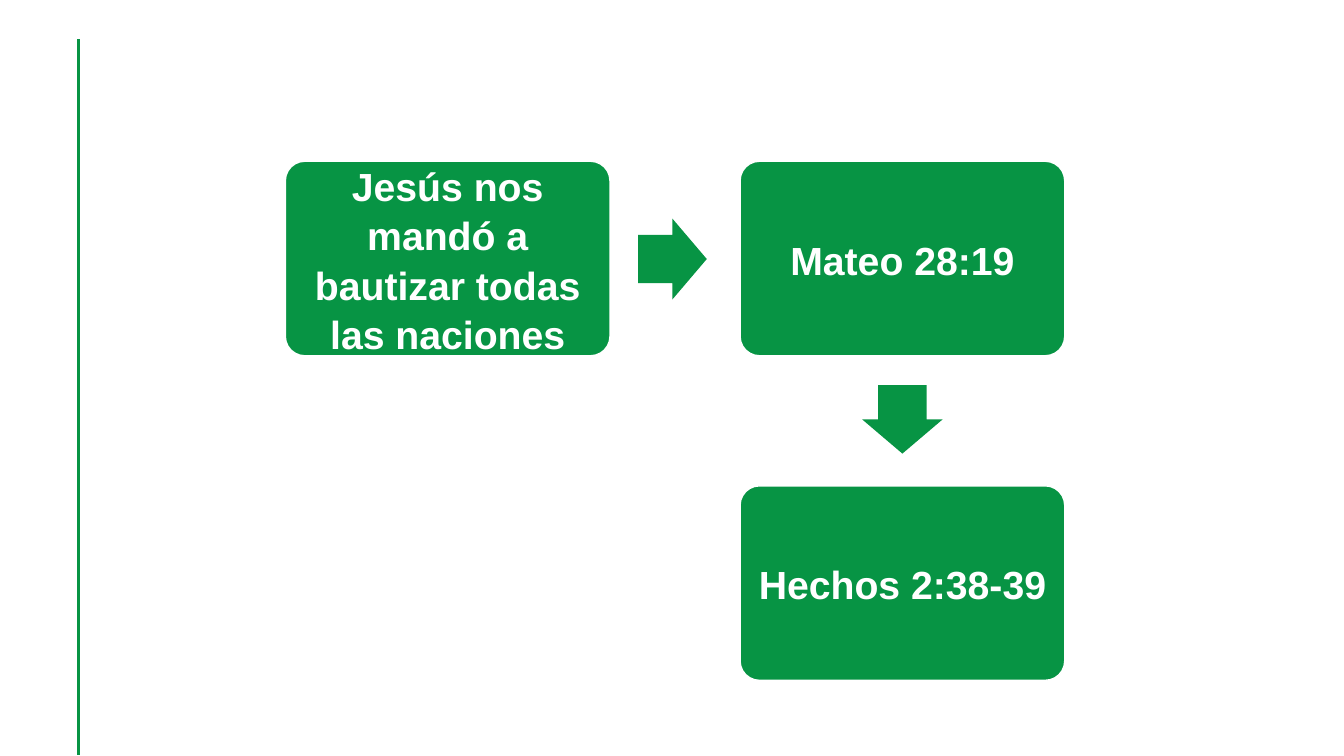
from lxml import etree
from pptx import Presentation
from pptx.dml.color import RGBColor
from pptx.enum.shapes import MSO_CONNECTOR, MSO_SHAPE
from pptx.enum.text import MSO_ANCHOR, PP_ALIGN
from pptx.oxml.ns import qn
from pptx.util import Pt

PX = 9144  # 100 px to the inch
COLORS = {name: RGBColor.from_string(value) for name, value in
          {"green": "079444", "white": "FFFFFF"}.items()}
STRAIGHT = MSO_CONNECTOR.STRAIGHT
ROUNDED = MSO_SHAPE.ROUNDED_RECTANGLE
RIGHT_ARROW = MSO_SHAPE.RIGHT_ARROW
MIDDLE = MSO_ANCHOR.MIDDLE
CENTER = PP_ALIGN.CENTER

BOX_WIDTH, BOX_HEIGHT = 322, 193
LEFT, TOP = 283, 160
COLUMN_STEP, ROW_STEP = 451, 322
ARROW_WIDTH, ARROW_HEIGHT = 68, 80
INSET = 12 * PX

STEPS = [  # text, column, row
    ("Jesús nos mandó a bautizar todas las naciones", 0, 0),
    ("Mateo 28:19", 1, 0),
    ("Hechos 2:38-39", 1, 1),
]
ARROWS = [(633, 217, 0), (861, 376, 90)]  # left, top, rotation

deck = Presentation()
deck.slide_width, deck.slide_height = 1333 * PX, 750 * PX
page = deck.slides.add_slide(deck.slide_layouts[6])


def add_green_shape(kind, left, top, width, height):
    shape = page.shapes.add_shape(kind, left * PX, top * PX, width * PX, height * PX)
    shape.shadow.inherit = False
    shape.fill.solid()
    shape.fill.fore_color.rgb = COLORS["green"]
    return shape


side_rule = page.shapes.add_connector(STRAIGHT, 78 * PX, 39 * PX, 78 * PX, 749 * PX)
side_rule.line.color.rgb = COLORS["green"]
side_rule.line.width = Pt(2)
etree.SubElement(side_rule._element.spPr, qn("a:effectLst"))

for text, column, row in STEPS:
    box = add_green_shape(ROUNDED, LEFT + column * COLUMN_STEP, TOP + row * ROW_STEP,
                          BOX_WIDTH, BOX_HEIGHT)
    box.adjustments[0] = 0.1
    box.line.color.rgb = COLORS["white"]
    box.line.width = Pt(1)
    frame = box.text_frame
    frame.word_wrap = True
    frame.vertical_anchor = MIDDLE
    frame.margin_left = frame.margin_right = INSET
    frame.margin_top = frame.margin_bottom = INSET
    para = frame.paragraphs[0]
    para.text = text
    para.alignment = CENTER
    para.line_spacing = 1.05
    para.font.name = "Arial"
    para.font.size = Pt(28)
    para.font.bold = True
    para.font.color.rgb = COLORS["white"]

for left, top, rotation in ARROWS:
    arrow = add_green_shape(RIGHT_ARROW, left, top, ARROW_WIDTH, ARROW_HEIGHT)
    arrow.adjustments[0] = 0.6
    arrow.adjustments[1] = 0.5
    arrow.rotation = rotation
    arrow.line.fill.background()

deck.save("out.pptx")
